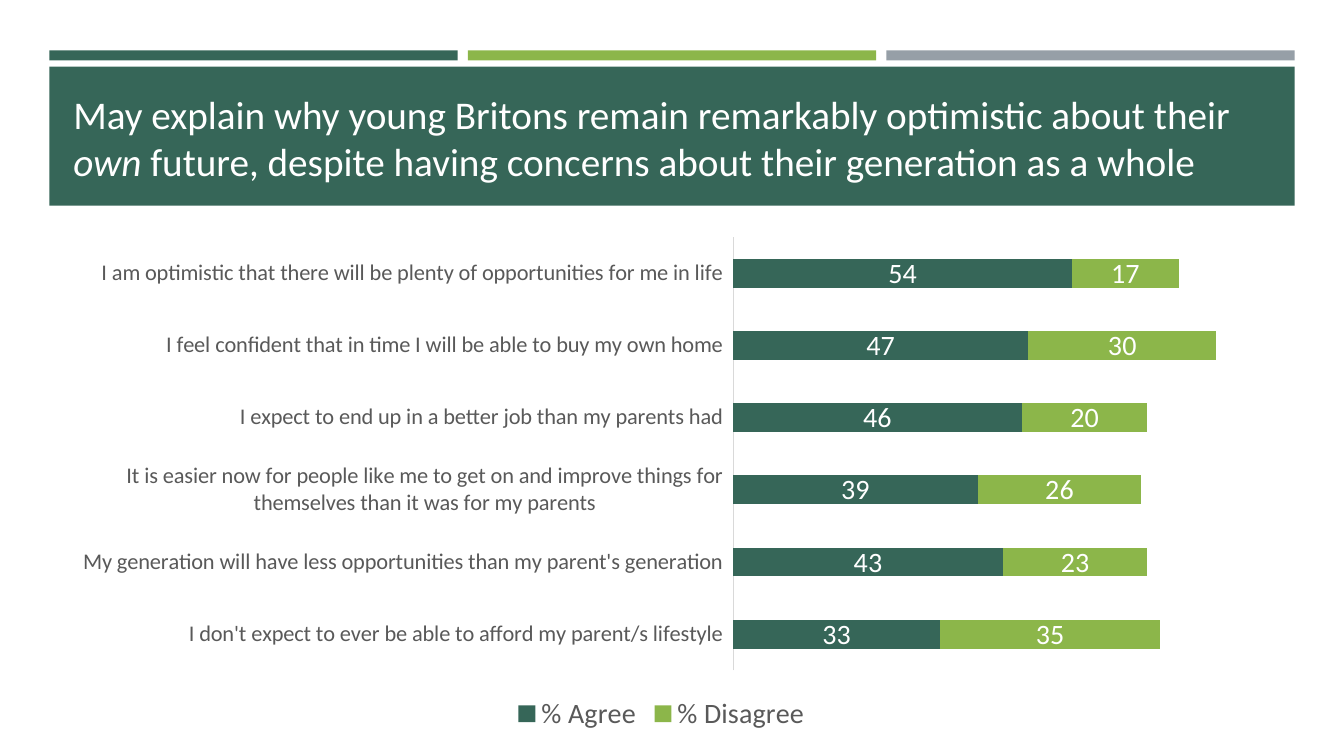
"""Build the slide on young Britons' optimism with its stacked bar chart."""
from lxml.etree import SubElement
from pptx import Presentation
from pptx.chart.data import CategoryChartData
from pptx.dml.color import RGBColor
from pptx.enum.chart import XL_CHART_TYPE, XL_LABEL_POSITION, XL_LEGEND_POSITION, XL_TICK_LABEL_POSITION, XL_TICK_MARK
from pptx.enum.shapes import MSO_SHAPE
from pptx.enum.text import MSO_ANCHOR
from pptx.oxml.ns import qn
from pptx.util import Inches, Pt

GREEN, LIME, GREY, WHITE, TEXT = "366658", "8CB64A", "969FA7", "FFFFFF", "595959"


def style_font(font, size, color):
    font.name, font.size = "Calibri", Pt(size)
    font.color.rgb = RGBColor.from_string(color)


def add_band(left, top, width, height, color):
    band = slide.shapes.add_shape(
        MSO_SHAPE.RECTANGLE, Inches(left), Inches(top), Inches(width), Inches(height))
    band.shadow.inherit = False
    band.fill.solid()
    band.fill.fore_color.rgb = RGBColor.from_string(color)
    band.line.fill.background()


deck = Presentation()
deck.slide_width, deck.slide_height = Inches(13.33), Inches(7.5)
slide = deck.slides.add_slide(deck.slide_layouts[6])

margin, stripe_width, stripe_pitch = 0.49, 4.05, 4.15
for column, color in enumerate((GREEN, LIME, GREY)):
    add_band(margin + column * stripe_pitch, 0.5, stripe_width, 0.1, color)
add_band(margin, 0.66, 2 * stripe_pitch + stripe_width, 1.38, GREEN)

headline = slide.shapes.add_textbox(Inches(0.63), Inches(0.8), Inches(12.06), Inches(1.08)).text_frame
headline.word_wrap = True
headline.vertical_anchor = MSO_ANCHOR.BOTTOM
for words, italic in (
    ("May explain why young Britons remain remarkably optimistic about their ", False),
    ("own", True),
    (" future, despite having concerns about their generation as a whole", False),
):
    run = headline.paragraphs[0].add_run()
    run.text = words
    run.font.italic = italic
    style_font(run.font, 28, WHITE)

answers = (
    ("I don't expect to ever be able to afford my parent/s lifestyle", 33, 35),
    ("My generation will have less opportunities than my parent's generation", 43, 23),
    ("It is easier now for people like me to get on and improve things for "
     "themselves than it was for my parents", 39, 26),
    ("I expect to end up in a better job than my parents had", 46, 20),
    ("I feel confident that in time I will be able to buy my own home", 47, 30),
    ("I am optimistic that there will be plenty of opportunities for me in life", 54, 17),
)
statements, agree, disagree = zip(*answers)
survey = CategoryChartData(number_format="0")
survey.categories = statements
survey.add_series("% Agree", agree)
survey.add_series("% Disagree", disagree)
chart = slide.shapes.add_chart(
    XL_CHART_TYPE.BAR_STACKED, Inches(0.63), Inches(2.25), Inches(11.86), Inches(5.06), survey).chart
style_font(chart.font, 10, "000000")
chart.has_title = False

chart.has_legend = True
chart.legend.position = XL_LEGEND_POSITION.BOTTOM
chart.legend.include_in_layout = False
style_font(chart.legend.font, 20, TEXT)

statement_axis = chart.category_axis
statement_axis.major_tick_mark = XL_TICK_MARK.NONE
statement_axis.tick_label_position = XL_TICK_LABEL_POSITION.LOW
statement_axis.format.line.color.rgb = RGBColor.from_string("D9D9D9")
statement_axis.format.line.width = Pt(0.75)
style_font(statement_axis.tick_labels.font, 16, TEXT)

percent_axis = chart.value_axis
percent_axis.minimum_scale, percent_axis.maximum_scale = 0, 80
percent_axis.has_major_gridlines = False
percent_axis.visible = False

bars = chart.plots[0]
bars.gap_width, bars.overlap = 150, 100
bars.vary_by_categories = False
for series, color in zip(bars.series, (GREEN, LIME)):
    series.format.fill.solid()
    series.format.fill.fore_color.rgb = RGBColor.from_string(color)
    labels = series.data_labels
    labels.show_value = True
    labels.number_format, labels.number_format_is_linked = "0", False
    labels.position = XL_LABEL_POSITION.CENTER
    style_font(labels.font, 20, WHITE)

plot_area = chart.element.find(".//" + qn("c:plotArea"))
layout = plot_area.find(qn("c:layout"))
if layout is None:
    layout = SubElement(plot_area, qn("c:layout"))
    plot_area.insert(0, layout)
manual = SubElement(layout, qn("c:manualLayout"))
for tag, value in (
    ("layoutTarget", "inner"), ("xMode", "edge"), ("yMode", "edge"),
    ("x", "0.56"), ("y", "0.02"), ("w", "0.42"), ("h", "0.85"),
):
    SubElement(manual, qn("c:" + tag)).set("val", value)

deck.save("out.pptx")
